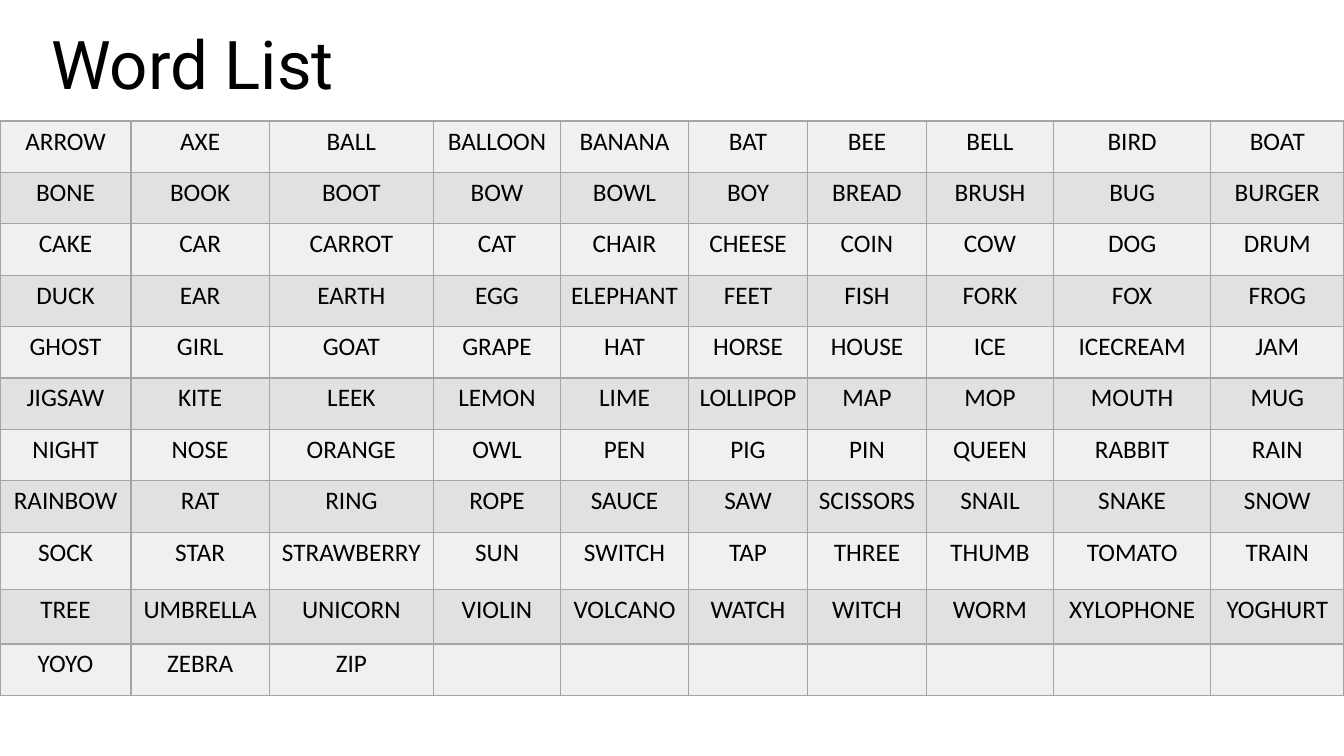
from dataclasses import dataclass
from itertools import product

from pptx import Presentation
from pptx.dml.color import RGBColor
from pptx.enum.text import PP_ALIGN
from pptx.oxml.ns import qn
from pptx.util import Emu, Pt
from lxml import etree

LEFT, CENTER = PP_ALIGN.LEFT, PP_ALIGN.CENTER
PX = 9144
WIDTH, HEIGHT = 1333, 750


@dataclass(frozen=True)
class Theme:
    ink: str = "000000"
    border: str = "A5A5A5"
    bands: tuple[str, str] = ("F0F0F0", "E1E1E1")
    title_font: str = "Roboto"
    word_font: str = "Calibri"
    title_size: int = 48
    word_size: int = 18
    border_width: int = 1


@dataclass(frozen=True)
class Box:
    left: int
    top: int
    width: int
    height: int

    def emu(self) -> tuple[Emu, ...]:
        return tuple(px(n) for n in (self.left, self.top, self.width, self.height))


@dataclass(frozen=True)
class WordCell:
    row: int
    col: int
    word: str


THEME = Theme()
TITLE_BOX = Box(41, 17, 540, 91)
COLS = [130, 137, 163, 126, 127, 118, 118, 126, 156, 132]
ROWS = [51] * 8 + [57, 54, 51]
TABLE_BOX = Box(0, 120, sum(COLS), sum(ROWS))
CELL_MARGIN = 7
WORDS = """
ARROW AXE BALL BALLOON BANANA BAT BEE BELL BIRD BOAT
BONE BOOK BOOT BOW BOWL BOY BREAD BRUSH BUG BURGER
CAKE CAR CARROT CAT CHAIR CHEESE COIN COW DOG DRUM
DUCK EAR EARTH EGG ELEPHANT FEET FISH FORK FOX FROG
GHOST GIRL GOAT GRAPE HAT HORSE HOUSE ICE ICECREAM JAM
JIGSAW KITE LEEK LEMON LIME LOLLIPOP MAP MOP MOUTH MUG
NIGHT NOSE ORANGE OWL PEN PIG PIN QUEEN RABBIT RAIN
RAINBOW RAT RING ROPE SAUCE SAW SCISSORS SNAIL SNAKE SNOW
SOCK STAR STRAWBERRY SUN SWITCH TAP THREE THUMB TOMATO TRAIN
TREE UMBRELLA UNICORN VIOLIN VOLCANO WATCH WITCH WORM XYLOPHONE YOGHURT
YOYO ZEBRA ZIP
""".split()


def px(n: int) -> Emu:
    return Emu(n * PX)


def write(tf, text: str, *, font: str, size: int, color: str, align=LEFT) -> None:
    p = tf.paragraphs[0]
    p.alignment = align
    r = p.add_run()
    r.text = text
    r.font.name = font
    r.font.size = Pt(size)
    r.font.color.rgb = RGBColor.from_string(color)


def add_borders(cell, color: str, width: int) -> None:
    tcPr = cell._tc.get_or_add_tcPr()
    for side in ("a:lnL", "a:lnR", "a:lnT", "a:lnB"):
        ln = etree.SubElement(tcPr, qn(side), w=str(Pt(width)))
        fill = etree.SubElement(ln, qn("a:solidFill"))
        etree.SubElement(fill, qn("a:srgbClr"), val=color)


def draw_cell(table, item: WordCell) -> None:
    cell = table.cell(item.row, item.col)
    cell.margin_left = cell.margin_right = px(CELL_MARGIN)
    add_borders(cell, THEME.border, THEME.border_width)
    cell.fill.solid()
    cell.fill.fore_color.rgb = RGBColor.from_string(THEME.bands[item.row % 2])
    if item.word:
        write(cell.text_frame, item.word, font=THEME.word_font,
              size=THEME.word_size, color=THEME.ink, align=CENTER)


def draw_word_table(s) -> None:
    table = s.shapes.add_table(len(ROWS), len(COLS), *TABLE_BOX.emu()).table
    table.first_row = table.horz_banding = False
    for column, width in zip(table.columns, COLS):
        column.width = px(width)
    for row, height in zip(table.rows, ROWS):
        row.height = px(height)
    for row, col in product(range(len(ROWS)), range(len(COLS))):
        i = row * len(COLS) + col
        draw_cell(table, WordCell(row, col, WORDS[i] if i < len(WORDS) else ""))


def draw_title(s) -> None:
    tf = s.shapes.add_textbox(*TITLE_BOX.emu()).text_frame
    tf.word_wrap = True
    write(tf, "Word List", font=THEME.title_font, size=THEME.title_size,
          color=THEME.ink)


def main() -> None:
    prs = Presentation()
    prs.slide_width, prs.slide_height = px(WIDTH), px(HEIGHT)
    s = prs.slides.add_slide(prs.slide_layouts[6])
    draw_word_table(s)
    draw_title(s)
    prs.save("out.pptx")


if __name__ == "__main__":
    main()
